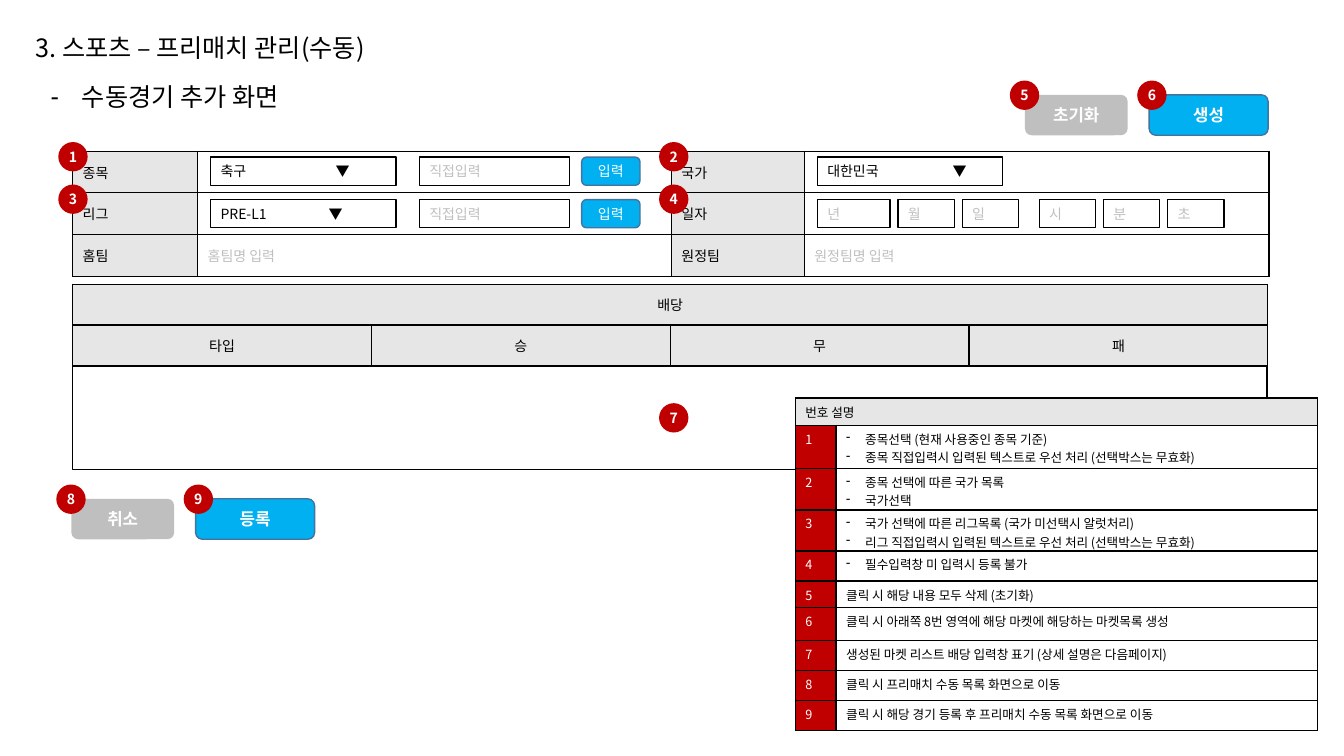
from lxml.etree import SubElement
from pptx import Presentation
from pptx.dml.color import RGBColor
from pptx.enum.shapes import MSO_SHAPE
from pptx.enum.text import MSO_ANCHOR, MSO_AUTO_SIZE, PP_ALIGN
from pptx.oxml.ns import qn
from pptx.util import Cm, Pt

COLORS = {"black": "000000", "white": "FFFFFF", "head": "E7E6E6", "gray": "BFBFBF",
          "blue": "00B0F0", "edge": "43739E", "red": "C00000"}


def color(name):
    return RGBColor.from_string(COLORS[name])


class Screen:
    font = "Noto Sans CJK KR"

    def __init__(self, slide):
        self.slide = slide

    def label(self, frame, text, size=10, ink="black", bold=False,
              center=False, dash=0, tab=0):
        """Fill a text frame; dash is the bullet indent and tab the stop, in cm."""
        frame.text = text
        for para in frame.paragraphs:
            props = para._p.get_or_add_pPr()
            if dash:
                props.set("marL", str(Cm(dash)))
                props.set("indent", str(-Cm(dash)))
                SubElement(props, qn("a:buChar"), char="-")
            if tab:
                stops = SubElement(props, qn("a:tabLst"))
                SubElement(stops, qn("a:tab"), pos=str(Cm(tab)), algn="l")
            para.alignment = PP_ALIGN.CENTER if center else PP_ALIGN.LEFT
            para.space_before = Pt(0)
            font = para.font
            font.size, font.bold = Pt(size), bold
            font.color.rgb = color(ink)
            font.name = self.font
            SubElement(props.find(qn("a:defRPr")), qn("a:ea"), typeface=self.font)

    def holder(self, shape, text, x, y, w, dash=0):
        shape.left, shape.top, shape.width, shape.height = Cm(x), Cm(y), Cm(w), Cm(1.02)
        frame = shape.text_frame
        frame.auto_size = MSO_AUTO_SIZE.NONE
        frame.vertical_anchor = MSO_ANCHOR.MIDDLE
        self.label(frame, text, 18, dash=dash)

    def shape(self, kind, x, y, w, h, fill, line=None, text="", pad=0.25, **style):
        shape = self.slide.shapes.add_shape(kind, Cm(x), Cm(y), Cm(w), Cm(h))
        shape.shadow.inherit = False
        shape.fill.solid()
        shape.fill.fore_color.rgb = color(fill)
        if line:
            shape.line.color.rgb = color(line)
            shape.line.width = Pt(1)
        else:
            shape.line.fill.background()
        frame = shape.text_frame
        frame.margin_left = frame.margin_right = Cm(pad)
        frame.margin_top = frame.margin_bottom = 0
        frame.vertical_anchor = MSO_ANCHOR.MIDDLE
        if text:
            self.label(frame, text, **style)

    def field(self, x, y, w, text, ink="gray", tab=0):
        self.shape(MSO_SHAPE.RECTANGLE, x, y, w, 0.71, "white", "black", text,
                   ink=ink, tab=tab)

    def button(self, x, y, w, h, text, fill="blue", size=12, bold=True):
        line = "edge" if fill == "blue" else None
        self.shape(MSO_SHAPE.ROUNDED_RECTANGLE, x, y, w, h, fill, line, text,
                   size=size, ink="white", bold=bold, center=True)

    def badge(self, x, y, number):
        self.shape(MSO_SHAPE.OVAL, x, y, 0.74, 0.74, "red", None, str(number),
                   pad=0, ink="white", bold=True, center=True)

    def table(self, x, y, cols, rows):
        frame = self.slide.shapes.add_table(len(rows), len(cols), Cm(x), Cm(y),
                                            Cm(sum(cols)), Cm(sum(rows)))
        table = frame.table
        for col, width in zip(table.columns, cols):
            col.width = Cm(width)
        for row, height in zip(table.rows, rows):
            row.height = Cm(height)
        return table

    def cell(self, cell, text="", fill="white", middle=True, **style):
        props = cell._tc.get_or_add_tcPr()
        for side in "LRTB":
            line = SubElement(props, qn(f"a:ln{side}"), w=str(Pt(1)))
            paint = SubElement(line, qn("a:solidFill"))
            SubElement(paint, qn("a:srgbClr"), val=COLORS["black"])
        cell.fill.solid()
        cell.fill.fore_color.rgb = color(fill)
        cell.vertical_anchor = MSO_ANCHOR.MIDDLE if middle else MSO_ANCHOR.TOP
        cell.margin_top = Cm(0.11)
        cell.margin_bottom = Cm(0.11 if middle else 0)
        self.label(cell.text_frame, text, **style)


def main():
    deck = Presentation()
    deck.slide_width, deck.slide_height = Cm(33.87), Cm(19.05)
    slide = deck.slides.add_slide(deck.slide_layouts[1])
    ui = Screen(slide)

    # Headings
    ui.holder(slide.shapes.title, "3. 스포츠 – 프리매치 관리(수동)", 0.64, 0.69, 9.9)
    ui.holder(slide.placeholders[1], "수동경기 추가 화면", 1.02, 1.93, 6.91, dash=0.79)

    # Odds table and its empty list area
    odds = ui.table(1.83, 7.16, [7.53] * 4, [1.03] * 2)
    for col, name in enumerate(["타입", "승", "무", "패"]):
        ui.cell(odds.cell(0, col), "" if col else "배당", "head", center=True)
        ui.cell(odds.cell(1, col), name, "head", center=True)
    odds.cell(0, 0).merge(odds.cell(0, 3))
    ui.shape(MSO_SHAPE.RECTANGLE, 1.83, 9.22, 30.1, 2.62, "white", "black")

    # Match form
    form = ui.table(1.83, 3.81, [3.15, 11.94, 3.35, 11.71], [1.05] * 3)
    labels = [("종목", "", "국가", ""), ("리그", "", "일자", ""),
              ("홈팀", "홈팀명 입력", "원정팀", "원정팀명 입력")]
    for row, names in enumerate(labels):
        for col, name in enumerate(names):
            fill, ink = ("white", "gray") if col % 2 else ("head", "black")
            ui.cell(form.cell(row, col), name, fill, ink=ink)

    # Form fields
    top, low = 3.96, 5.03
    for y, pick, tab in [(top, "축구\t▼", 2.9), (low, "PRE-L1\t▼", 2.72)]:
        ui.field(5.31, y, 4.67, pick, "black", tab)
        ui.field(10.57, y, 3.78, "직접입력")
        ui.button(14.66, y, 1.47, 0.71, "입력", size=10, bold=False)
    ui.field(20.6, top, 4.67, "대한민국\t▼", "black", 3.16)
    ui.field(20.6, low, 1.83, "년")
    for x, units in [(22.63, "월일"), (26.19, "시분초")]:
        for step, unit in enumerate(units):
            ui.field(x + step * 1.62, low, 1.42, unit)

    # Button pairs with their badges
    for x, y, gray, blue, first in [(25.83, 2.39, "초기화", "생성", 5),
                                    (1.8, 12.57, "취소", "등록", 8)]:
        ui.button(x, y, 2.59, 1.02, gray, "gray")
        ui.button(x + 3.13, y, 3, 1.02, blue)
        ui.badge(x - 0.38, y - 0.36, first)
        ui.badge(x + 2.83, y - 0.36, first + 1)

    # Form and list badges
    for index in range(4):
        ui.badge((1.47, 16.61)[index % 2], 3.58 + index // 2 * 1.07, index + 1)
    ui.badge(16.61, 10.16, 7)

    # Legend
    notes = [
        ("종목선택 (현재 사용중인 종목 기준)\n"
         "종목 직접입력시 입력된 텍스트로 우선 처리 (선택박스는 무효화)", 1.09),
        ("종목 선택에 따른 국가 목록\n국가선택", 1.04),
        ("국가 선택에 따른 리그목록 (국가 미선택시 알럿처리)\n"
         "리그 직접입력시 입력된 텍스트로 우선 처리 (선택박스는 무효화)", 1.02),
        ("필수입력창 미 입력시 등록 불가", 0.76),
        ("클릭 시 해당 내용 모두 삭제 (초기화)", 0.66),
        ("클릭 시 아래쪽 8번 영역에 해당 마켓에 해당하는 마켓목록 생성", 0.83),
        ("생성된 마켓 리스트 배당 입력창 표기 (상세 설명은 다음페이지)", 0.76),
        ("클릭 시 프리매치 수동 목록 화면으로 이동", 0.76),
        ("클릭 시 해당 경기 등록 후 프리매치 수동 목록 화면으로 이동", 0.76),
    ]
    heights = [0.69] + [height for _, height in notes]
    legend = ui.table(20.04, 10.03, [1.03, 12.14], heights)
    for col, name in enumerate(["번호 설명", ""]):
        ui.cell(legend.cell(0, col), name, "head", middle=False, size=9)
    legend.cell(0, 0).merge(legend.cell(0, 1))
    for row, (note, _) in enumerate(notes, 1):
        ui.cell(legend.cell(row, 0), str(row), "red", middle=False, size=9, ink="white")
        ui.cell(legend.cell(row, 1), note, middle=False, size=9,
                dash=0.48 if row <= 4 else 0)

    deck.save("out.pptx")


if __name__ == "__main__":
    main()
